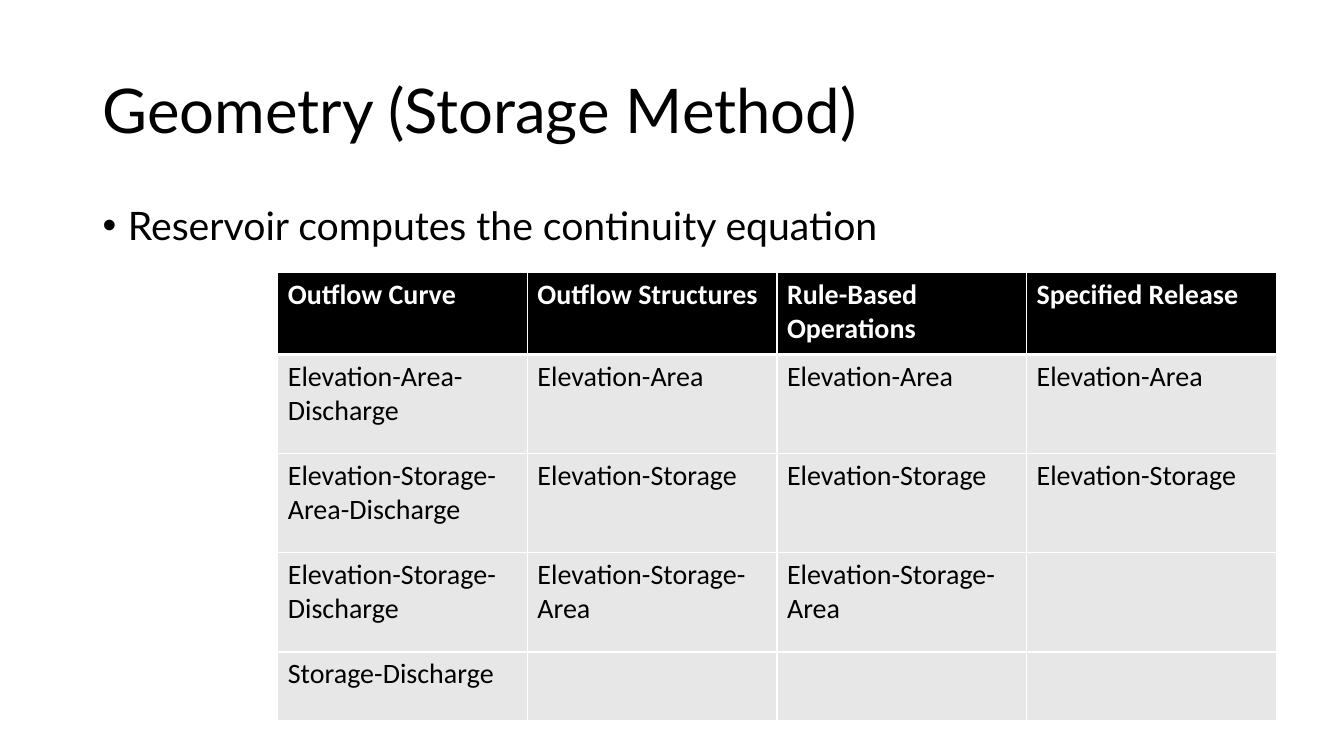
from dataclasses import dataclass

from lxml.etree import SubElement
from pptx import Presentation
from pptx.dml.color import RGBColor
from pptx.enum.text import MSO_ANCHOR, PP_ALIGN
from pptx.oxml.ns import qn
from pptx.util import Cm, Pt


@dataclass(frozen=True)
class Theme:
    heading_font: str = "Lato"
    table_font: str = "Calibri"
    ink: str = "000000"
    paper: str = "FFFFFF"
    band: str = "E7E7E7"
    title_size: int = 44
    body_size: int = 28
    table_size: int = 20
    rule: int = 1
    header_rule: int = 3


class SlideBuilder:
    def __init__(self, slide, theme):
        self.slide = slide
        self.theme = theme

    def place(self, shape, left, top, width, height):
        shape.left, shape.top = Cm(left), Cm(top)
        shape.width, shape.height = Cm(width), Cm(height)

    def add_text(self, paragraph, text, font, size, color, bold=False):
        run = paragraph.add_run()
        run.text = text
        run.font.name = font
        run.font.size = Pt(size)
        run.font.bold = bold
        run.font.color.rgb = RGBColor.from_string(color)

    def title(self, text, *box):
        heading = self.slide.shapes.title
        self.place(heading, *box)
        heading.text_frame.vertical_anchor = MSO_ANCHOR.MIDDLE
        paragraph = heading.text_frame.paragraphs[0]
        paragraph.alignment = PP_ALIGN.LEFT
        paragraph.line_spacing = 0.9
        self.add_text(paragraph, text, self.theme.heading_font,
                      self.theme.title_size, self.theme.ink)

    def bullet(self, text, *box):
        body = self.slide.placeholders[1]
        self.place(body, *box)
        paragraph = body.text_frame.paragraphs[0]
        paragraph.line_spacing = 0.9
        paragraph.space_before = Pt(0)
        properties = paragraph._p.get_or_add_pPr()
        properties.set("marL", str(Cm(0.64)))
        properties.set("indent", str(-Cm(0.64)))
        SubElement(properties, qn("a:buFont"), typeface="Arial")
        SubElement(properties, qn("a:buChar"), char="•")
        self.add_text(paragraph, text, self.theme.heading_font,
                      self.theme.body_size, self.theme.ink)

    def border(self, cell, side, width):
        line = SubElement(cell._tc.get_or_add_tcPr(), qn(f"a:ln{side}"),
                          w=str(Pt(width)))
        fill = SubElement(line, qn("a:solidFill"))
        SubElement(fill, qn("a:srgbClr"), val=self.theme.paper)

    def cell(self, cell, text, is_header, below_header):
        theme = self.theme
        widths = {
            "L": theme.rule,
            "R": theme.rule,
            "T": theme.header_rule if below_header else theme.rule,
            "B": theme.header_rule if is_header else theme.rule,
        }
        for side, width in widths.items():
            self.border(cell, side, width)
        cell.fill.solid()
        cell.fill.fore_color.rgb = RGBColor.from_string(
            theme.ink if is_header else theme.band)
        if text:
            self.add_text(cell.text_frame.paragraphs[0], text,
                          theme.table_font, theme.table_size,
                          theme.paper if is_header else theme.ink, is_header)

    def table(self, rows, left, top, column_width, row_heights):
        columns = len(rows[0])
        table = self.slide.shapes.add_table(
            len(rows), columns, Cm(left), Cm(top),
            Cm(column_width * columns), Cm(sum(row_heights))).table
        for column in table.columns:
            column.width = Cm(column_width)
        for index, (texts, height) in enumerate(zip(rows, row_heights)):
            table.rows[index].height = Cm(height)
            for position, text in enumerate(texts):
                self.cell(table.cell(index, position), text,
                          index == 0, index == 1)


STORAGE_METHODS = [
    ["Outflow Curve", "Outflow Structures", "Rule-Based Operations",
     "Specified Release"],
    ["Elevation-Area-Discharge"] + ["Elevation-Area"] * 3,
    ["Elevation-Storage-Area-Discharge"] + ["Elevation-Storage"] * 3,
    ["Elevation-Storage-Discharge"] + ["Elevation-Storage-Area"] * 2 + [""],
    ["Storage-Discharge", "", "", ""],
]


def main():
    presentation = Presentation()
    presentation.slide_width = Cm(33.87)
    presentation.slide_height = Cm(19.05)
    slide = presentation.slides.add_slide(presentation.slide_layouts[1])
    builder = SlideBuilder(slide, Theme())
    builder.title("Geometry (Storage Method)", 2.33, 1.01, 29.21, 3.68)
    builder.bullet("Reservoir computes the continuity equation",
                   2.33, 5.08, 29.21, 12.09)
    builder.table(STORAGE_METHODS, 7, 6.87, 6.29, [2.06, 2.5, 2.5, 2.5, 1.72])
    presentation.save("out.pptx")


if __name__ == "__main__":
    main()
